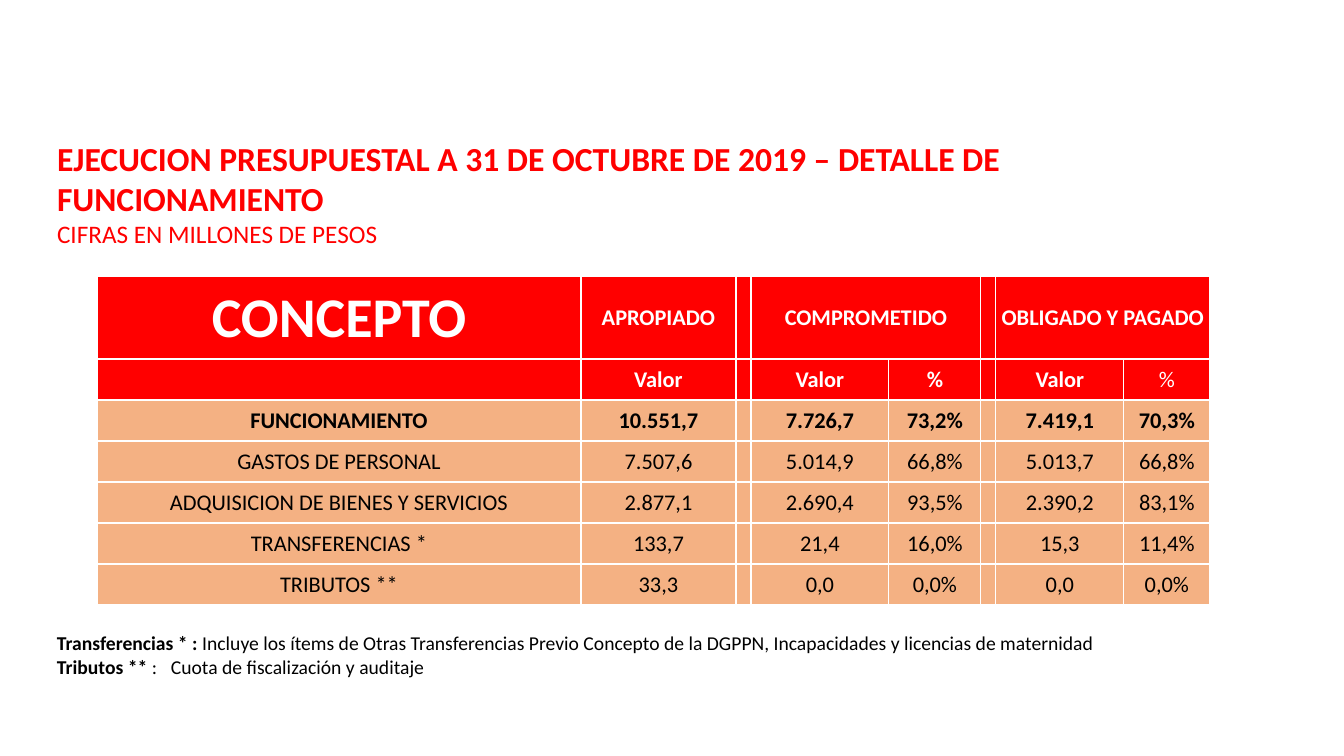
import pptx
import pptx.util
import pptx.dml.color
import pptx.enum.text
import pptx.oxml
import pptx.oxml.ns

PX = 914400 / 100.8  # EMU per pixel
RED, SAND, WHITE, BLACK = "FF0000", "F4B183", "FFFFFF", "000000"
ALIGN = pptx.enum.text.PP_ALIGN
ANCHOR = pptx.enum.text.MSO_ANCHOR


def px(*sizes):
    return [pptx.util.Emu(round(size * PX)) for size in sizes]


def add_run(para, text, size, color, bold):
    run = para.add_run()
    run.text = text
    run.font.name = "Calibri"
    run.font.size = pptx.util.Pt(size)
    run.font.bold = bold
    run.font.color.rgb = pptx.dml.color.RGBColor.from_string(color)


deck = pptx.Presentation()
deck.slide_width, deck.slide_height = px(1344, 756)
slide = deck.slides.add_slide(deck.slide_layouts[5])

# Title
title = slide.shapes.title
title.left, title.top, title.width, title.height = px(47, 133, 1212, 122)
frame = title.text_frame
frame.word_wrap = True
frame.auto_size = pptx.enum.text.MSO_AUTO_SIZE.NONE
frame.vertical_anchor = ANCHOR.TOP
para = frame.paragraphs[0]
para.alignment = ALIGN.LEFT
add_run(para, "EJECUCION PRESUPUESTAL A 31 DE OCTUBRE DE 2019 – DETALLE DE FUNCIONAMIENTO", 24, RED, True)
para = frame.add_paragraph()
para.alignment = ALIGN.LEFT
add_run(para, "CIFRAS EN MILLONES DE PESOS", 18, RED, False)

# Budget table: empty strings are gap columns or merged cells
rows = [
    ["CONCEPTO", "APROPIADO", "", "COMPROMETIDO", "", "", "OBLIGADO Y PAGADO", ""],
    ["", "Valor", "", "Valor", "%", "", "Valor", "%"],
    ["FUNCIONAMIENTO", "10.551,7", "", "7.726,7", "73,2%", "", "7.419,1", "70,3%"],
    ["GASTOS DE PERSONAL", "7.507,6", "", "5.014,9", "66,8%", "", "5.013,7", "66,8%"],
    ["ADQUISICION DE BIENES Y SERVICIOS", "2.877,1", "", "2.690,4", "93,5%", "", "2.390,2", "83,1%"],
    ["TRANSFERENCIAS *", "133,7", "", "21,4", "16,0%", "", "15,3", "11,4%"],
    ["TRIBUTOS **", "33,3", "", "0,0", "0,0%", "", "0,0", "0,0%"],
]
widths = px(484, 155, 15, 138, 92, 15, 128, 86)
heights = px(83, *[41] * 6)
left, top = px(97, 276)
table = slide.shapes.add_table(len(rows), len(widths), left, top, sum(widths), sum(heights)).table
table.first_row = table.horz_banding = False
for col, width in zip(table.columns, widths):
    col.width = width
for row, height in zip(table.rows, heights):
    row.height = height
for start in (3, 6):
    table.cell(0, start).merge(table.cell(0, start + 1))

edge, = px(1)
for r, row in enumerate(rows):
    for c, text in enumerate(row):
        cell = table.cell(r, c)
        cell.margin_left = cell.margin_right = cell.margin_top = edge
        cell.margin_bottom = 0
        cell.vertical_anchor = ANCHOR.MIDDLE
        props = cell._tc.get_or_add_tcPr()
        for side in "LRTB":
            props.append(pptx.oxml.parse_xml(
                f'<a:ln{side} {pptx.oxml.ns.nsdecls("a")} w="12700"><a:solidFill>'
                f'<a:srgbClr val="{WHITE}"/></a:solidFill></a:ln{side}>'))
        head = r < 2
        cell.fill.solid()
        cell.fill.fore_color.rgb = pptx.dml.color.RGBColor.from_string(RED if head else SAND)
        if text:
            para = cell.text_frame.paragraphs[0]
            para.alignment = ALIGN.CENTER
            size = 40 if r == c == 0 else 16
            bold = r < 3 and (r, c) != (1, 7)
            add_run(para, text, size, WHITE if head else BLACK, bold)

# Footnotes
notes = [
    ("Transferencias * : ", "Incluye los ítems de Otras Transferencias Previo Concepto de la DGPPN, "
     "Incapacidades y licencias de maternidad"),
    ("Tributos ** ", ":\tCuota de fiscalización y auditaje"),
]
frame = slide.shapes.add_textbox(*px(47, 626, 1085, 57)).text_frame
frame.word_wrap = True
for i, (term, note) in enumerate(notes):
    para = frame.add_paragraph() if i else frame.paragraphs[0]
    if "\t" in note:
        stop, = px(114)
        para._p.get_or_add_pPr().append(pptx.oxml.parse_xml(
            f'<a:tabLst {pptx.oxml.ns.nsdecls("a")}><a:tab pos="{stop}" algn="l"/></a:tabLst>'))
    add_run(para, term, 14, BLACK, True)
    add_run(para, note, 14, BLACK, False)

deck.save("out.pptx")
